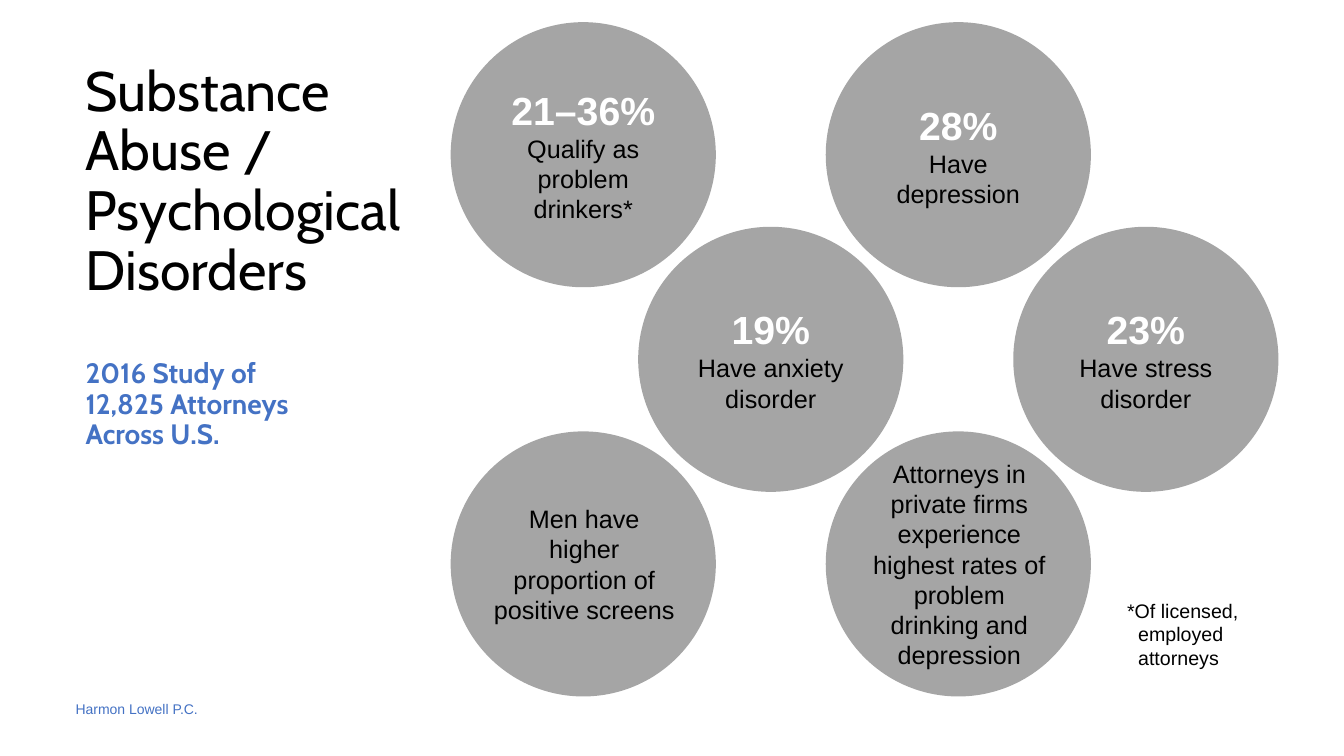
from copy import deepcopy
from dataclasses import dataclass

from pptx import Presentation
from pptx import util as u
from pptx.dml.color import RGBColor
from pptx.enum import shapes, text
from pptx.oxml.ns import qn

PX = 9144  # EMU per px, 100 px to the inch


@dataclass(frozen=True)
class Theme:
    black: str = "000000"
    white: str = "FFFFFF"
    blue: str = "4472C4"
    gray: str = "A5A5A5"
    heading_font: str = "Cabin"
    body_font: str = "Arial"
    title: float = 39.6
    figure: int = 28
    subtitle: int = 20
    label: int = 18
    note: int = 14
    footer: int = 10


def apply(target, formats):
    for name, value in formats.items():
        setattr(target, name, value)


class SlideBuilder:
    def __init__(self, slide, theme):
        self.slide = slide
        self.theme = theme

    def _frame(self, shape, insets, anchor):
        left, top = insets
        apply(shape.text_frame, dict(
            word_wrap=True, vertical_anchor=anchor,
            margin_left=left * PX, margin_right=left * PX,
            margin_top=top * PX, margin_bottom=top * PX))
        return shape.text_frame

    def _write(self, paragraph, words, size, color, font, bold=False, **layout):
        paragraph.text = words
        apply(paragraph, layout)
        for run in paragraph.runs:
            apply(run.font, dict(size=u.Pt(size), name=font, bold=bold))
            run.font.color.rgb = RGBColor.from_string(color)
        # Line breaks keep the size of their text
        for line_break in paragraph._p.findall(qn("a:br")):
            line_break.append(deepcopy(paragraph.runs[0]._r.rPr))

    def _indent(self, paragraph, margin, first):
        properties = paragraph._p.get_or_add_pPr()
        properties.set("marL", str(margin * PX))
        properties.set("indent", str(first * PX))

    def text_box(self, box, words, size, color, font, insets=(10, 5),
                 anchor=text.MSO_ANCHOR.TOP, hanging=0, **style):
        shape = self.slide.shapes.add_textbox(*(v * PX for v in box))
        paragraph = self._frame(shape, insets, anchor).paragraphs[0]
        self._write(paragraph, words, size, color, font, **style)
        if hanging:
            self._indent(paragraph, hanging, -hanging)

    def circle(self, left, top, diameter, figure, label):
        theme = self.theme
        shape = self.slide.shapes.add_shape(
            shapes.MSO_SHAPE.OVAL, *(v * PX for v in (left, top, diameter, diameter)))
        shape.shadow.inherit = False
        shape.fill.solid()
        shape.fill.fore_color.rgb = RGBColor.from_string(theme.gray)
        shape.line.fill.background()
        frame = self._frame(shape, (0, 5), text.MSO_ANCHOR.MIDDLE)
        paragraph = frame.paragraphs[0]
        center = text.PP_ALIGN.CENTER
        if figure:
            self._write(paragraph, figure, theme.figure, theme.white,
                        theme.body_font, bold=True, alignment=center)
            paragraph = frame.add_paragraph()
        self._write(paragraph, label, theme.label, theme.black,
                    theme.body_font, alignment=center)
        if not figure:
            self._indent(paragraph, 2, 0)


def main():
    deck = Presentation()
    apply(deck, dict(slide_width=1333 * PX, slide_height=750 * PX))
    theme = Theme()
    page = SlideBuilder(deck.slides.add_slide(deck.slide_layouts[6]), theme)

    # Heading column
    page.text_box((75, 50, 335, 263), "Substance Abuse / Psychological Disorders",
                  theme.title, theme.black, theme.heading_font,
                  anchor=text.MSO_ANCHOR.MIDDLE, line_spacing=0.9)
    page.text_box((75, 352, 335, 103), "2016 Study of\n12,825 Attorneys\nAcross U.S.",
                  theme.subtitle, theme.blue, theme.heading_font,
                  bold=True, line_spacing=0.9)

    # Findings: column, row, figure, label
    findings = [
        (0, 0, "21–36%", "Qualify as problem drinkers*"),
        (1, 1, "19%", "Have anxiety disorder"),
        (2, 0, "28%", "Have depression"),
        (3, 1, "23%", "Have stress disorder"),
        (0, 2, "", "Men have higher proportion of positive screens"),
        (2, 2, "", "Attorneys in private firms experience highest rates of "
                   "problem drinking and depression"),
    ]
    for column, row, figure, label in findings:
        page.circle(447 + 186 * column, 22 + 203 * row, 263, figure, label)

    # Footnote and footer
    page.text_box((1108, 589, 217, 81), "*Of licensed,\nemployed\nattorneys",
                  theme.note, theme.black, theme.body_font, hanging=11)
    page.text_box((75, 695, 533, 40), "Harmon Lowell P.C.", theme.footer,
                  theme.blue, theme.body_font, insets=(0, 0))

    deck.save("out.pptx")


if __name__ == "__main__":
    main()
